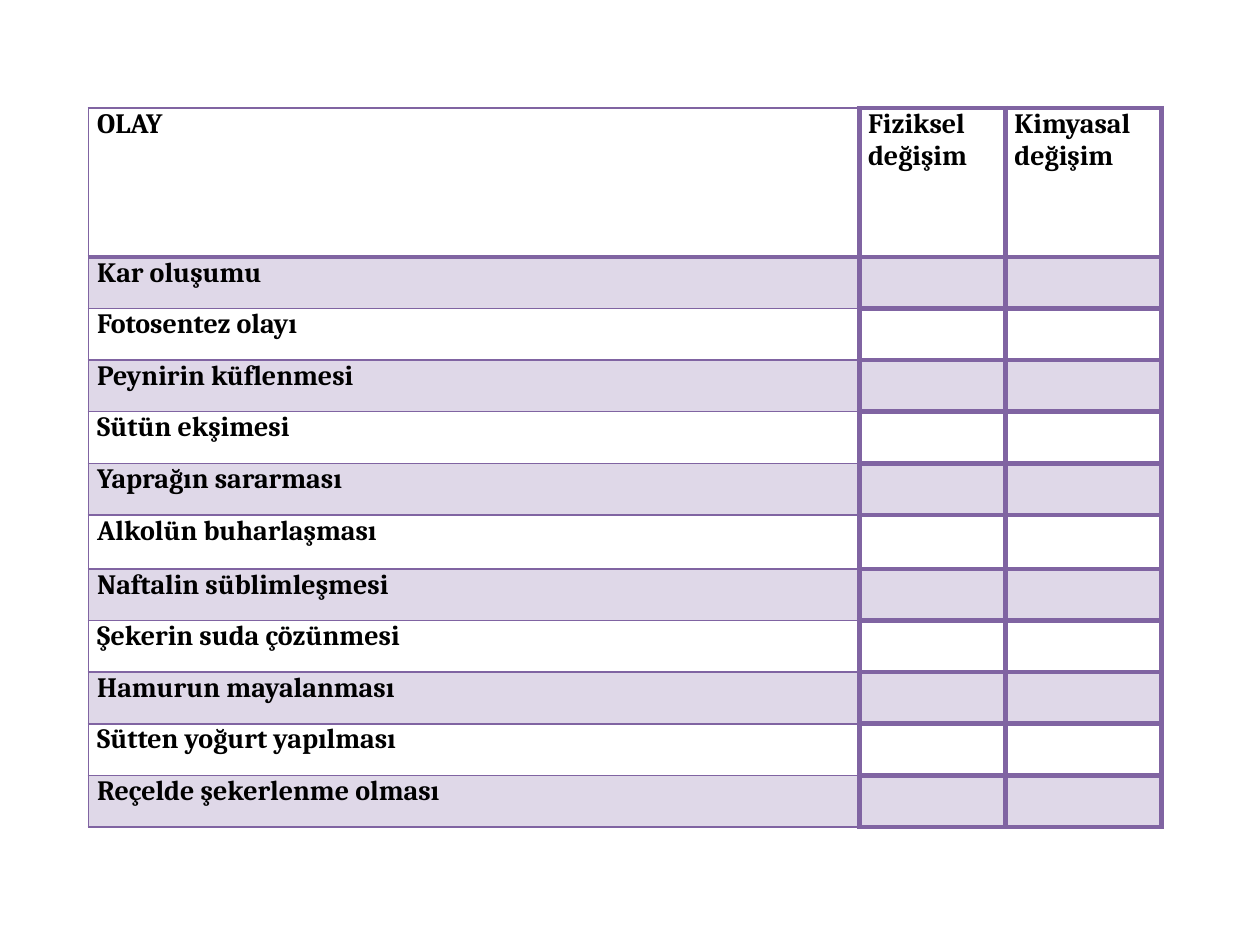
from dataclasses import dataclass

from lxml import etree
from pptx import Presentation
from pptx import util as u
from pptx.dml.color import RGBColor
from pptx.oxml import ns

COLORS = {"rule": "8064A2", "band": "DFD8E8", "plain": "FFFFFF", "ink": "000000"}
HEADINGS = ("OLAY", "Fiziksel değişim", "Kimyasal değişim")
COLUMN_WIDTHS = (15.54, 2.95, 3.15)
HEADING_HEIGHT = 3.0
THIN, MEDIUM, THICK = 1, 2.25, 3


@dataclass(frozen=True)
class Event:
    name: str
    height: float = 1.04


EVENTS = (
    Event("Kar oluşumu"),
    Event("Fotosentez olayı"),
    Event("Peynirin küflenmesi"),
    Event("Sütün ekşimesi"),
    Event("Yaprağın sararması"),
    Event("Alkolün buharlaşması", 1.09),
    Event("Naftalin süblimleşmesi"),
    Event("Şekerin suda çözünmesi"),
    Event("Hamurun mayalanması"),
    Event("Sütten yoğurt yapılması"),
    Event("Reçelde şekerlenme olması"),
)


def set_borders(cell, widths: dict[str, float]) -> None:
    """Rule the cell's sides; widths are points, keyed L, R, T, B in that order."""
    properties = cell._tc.get_or_add_tcPr()
    for position, (side, width) in enumerate(widths.items()):
        line = etree.Element(ns.qn(f"a:ln{side}"), w=str(u.Pt(width)))
        fill = etree.SubElement(line, ns.qn("a:solidFill"))
        etree.SubElement(fill, ns.qn("a:srgbClr"), val=COLORS["rule"])
        properties.insert(position, line)


def border_widths(row: int, column: int) -> dict[str, float]:
    if column > 0:
        return dict.fromkeys("LRTB", THICK)
    return {
        "L": THIN,
        "R": THICK,
        "T": MEDIUM if row == 1 else THIN,
        "B": MEDIUM if row == 0 else THIN,
    }


def fill_cell(cell, wording: str, color: str) -> None:
    cell.margin_left = cell.margin_right = u.Cm(0.18)
    cell.margin_top = cell.margin_bottom = 0
    cell.fill.solid()
    cell.fill.fore_color.rgb = RGBColor.from_string(COLORS[color])
    if not wording:
        return
    cell.text_frame.text = wording
    for run in cell.text_frame.paragraphs[0].runs:
        run.font.name = "Cambria"
        run.font.size = u.Pt(16)
        run.font.bold = True
        run.font.color.rgb = RGBColor.from_string(COLORS["ink"])


def draw_change_table(slide) -> None:
    rows = [HEADINGS] + [(event.name, "", "") for event in EVENTS]
    heights = [HEADING_HEIGHT] + [event.height for event in EVENTS]
    table = slide.shapes.add_table(
        len(rows), len(HEADINGS), u.Cm(1.78), u.Cm(2.18),
        u.Cm(sum(COLUMN_WIDTHS)), u.Cm(sum(heights)),
    ).table
    table.first_row = table.horz_banding = False
    for column, width in zip(table.columns, COLUMN_WIDTHS):
        column.width = u.Cm(width)
    for r, (wordings, height) in enumerate(zip(rows, heights)):
        table.rows[r].height = u.Cm(height)
        for c, wording in enumerate(wordings):
            cell = table.cell(r, c)
            fill_cell(cell, wording, "band" if r % 2 else "plain")
            set_borders(cell, border_widths(r, c))


def main() -> None:
    presentation = Presentation()
    presentation.slide_width = u.Cm(25.4)
    presentation.slide_height = u.Cm(19.05)
    slide = presentation.slides.add_slide(presentation.slide_layouts[6])
    draw_change_table(slide)
    presentation.save("out.pptx")


if __name__ == "__main__":
    main()
